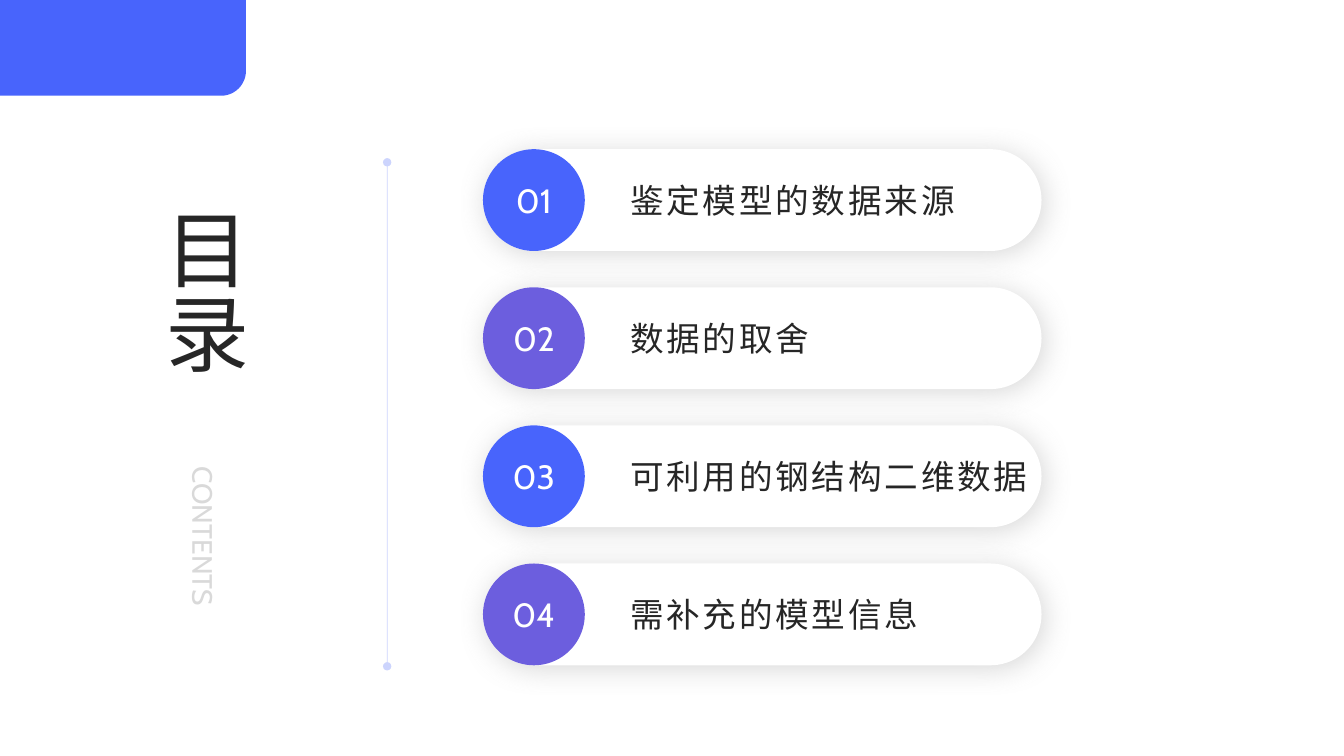
import pptx
import pptx.util
import pptx.dml.color
import pptx.enum.shapes
import pptx.enum.text
import pptx.oxml
import pptx.oxml.ns
from dataclasses import dataclass

Inches = pptx.util.Inches
Shape = pptx.enum.shapes.MSO_SHAPE
Align = pptx.enum.text.PP_ALIGN


@dataclass(frozen=True)
class Theme:
    font: str = "Cabin"
    blue: str = "4864FC"
    purple: str = "6C5EDE"
    white: str = "FFFFFF"
    ink: str = "262626"
    pale: str = "D9D9D9"
    rule: str = "002AF9"
    shade: str = "808080"
    title: int = 60
    label: int = 20
    item: int = 24


THEME = Theme()
TOPICS = ["鉴定模型的数据来源", "数据的取舍", "可利用的钢结构二维数据", "需补充的模型信息"]


def color(code):
    return pptx.dml.color.RGBColor.from_string(code)


def parse(tag, attrs="", body=""):
    space = pptx.oxml.ns.nsdecls("a")
    return pptx.oxml.parse_xml(f"<a:{tag} {space} {attrs}>{body}</a:{tag}>")


def tint(code, alpha):
    return f'<a:srgbClr val="{code}"><a:alpha val="{alpha * 1000}"/></a:srgbClr>'


def write(shape, text, size, ink, align, inset=0.0):
    frame = shape.text_frame
    frame.word_wrap = True
    frame.vertical_anchor = pptx.enum.text.MSO_ANCHOR.MIDDLE
    frame.margin_left = frame.margin_right = Inches(inset)
    frame.margin_top = frame.margin_bottom = 0
    para = frame.paragraphs[0]
    para.text = text
    para.alignment = align
    para.font.name = THEME.font
    para.font.size = pptx.util.Pt(size)
    para.font.color.rgb = color(ink)
    return frame


def add_form(slide, kind, box, fill):
    shape = slide.shapes.add_shape(kind, *map(Inches, box))
    shape.shadow.inherit = False
    shape.fill.solid()
    shape.fill.fore_color.rgb = color(fill)
    shape.line.fill.background()
    return shape


def add_text(slide, box, text, size, ink, align, inset=0.1):
    shape = slide.shapes.add_textbox(*map(Inches, box))
    return write(shape, text, size, ink, align, inset)


def add_tall(slide, box, text, size, ink):
    frame = add_text(slide, box, text, size, ink, Align.LEFT)
    frame.margin_top = frame.margin_bottom = Inches(0.05)
    frame._txBody.bodyPr.set("vert", "eaVert")


def add_corner(slide):
    shape = add_form(slide, Shape.ROUND_1_RECTANGLE, (0, 0, 2.44, 0.95), THEME.blue)
    shape.adjustments[0] = 0.26
    shape._element.spPr.xfrm.set("flipV", "1")


def add_rule(slide, x, top, end):
    kind = pptx.enum.shapes.MSO_CONNECTOR.STRAIGHT
    rule = slide.shapes.add_connector(kind, *map(Inches, (x, top, x, end)))
    rule.line.width = pptx.util.Pt(0.5)
    rule.line.color.rgb = color(THEME.rule)
    line = rule.line._get_or_add_ln()
    line.find(".//" + pptx.oxml.ns.qn("a:srgbClr")).append(parse("alpha", 'val="20000"'))
    line.append(parse("headEnd", 'type="oval"'))
    line.append(parse("tailEnd", 'type="oval"'))
    rule._element.spPr.append(parse("effectLst"))


def add_shade(shape):
    glow = parse(
        "outerShdw",
        f'blurRad="{pptx.util.Pt(20)}" dist="{pptx.util.Pt(3)}" dir="2700000" algn="tl" rotWithShape="0"',
        tint(THEME.shade, 30),
    )
    shape._element.spPr.find(pptx.oxml.ns.qn("a:effectLst")).append(glow)


def add_topic(slide, index, text):
    left, top, size = 4.79, 1.48 + index * 1.37, 1.01
    fill = (THEME.blue, THEME.purple)[index % 2]
    pill = add_form(slide, Shape.ROUNDED_RECTANGLE, (left, top, 5.54, size), THEME.white)
    pill.adjustments[0] = 0.5
    add_shade(pill)
    badge = add_form(slide, Shape.OVAL, (left, top, size, size), fill)
    write(badge, f"{index + 1:02}", THEME.item, THEME.white, Align.CENTER)
    box = (6.15, top, 4.19, size)
    frame = add_text(slide, box, text, THEME.item, THEME.ink, Align.LEFT)
    frame.paragraphs[0].runs[0].font._element.set("spc", "200")


def main():
    deck = pptx.Presentation()
    deck.slide_width, deck.slide_height = Inches(13.33), Inches(7.5)
    slide = deck.slides.add_slide(deck.slide_layouts[6])
    add_rule(slide, 3.84, 1.61, 6.61)
    add_corner(slide)
    add_tall(slide, (1.27, 4.53, 1.5, 2.13), "CONTENTS", THEME.label, THEME.pale)
    add_tall(slide, (1.28, 1.96, 1.5, 2.32), "目录", THEME.title, THEME.ink)
    for index, text in enumerate(TOPICS):
        add_topic(slide, index, text)
    deck.save("out.pptx")


if __name__ == "__main__":
    main()
